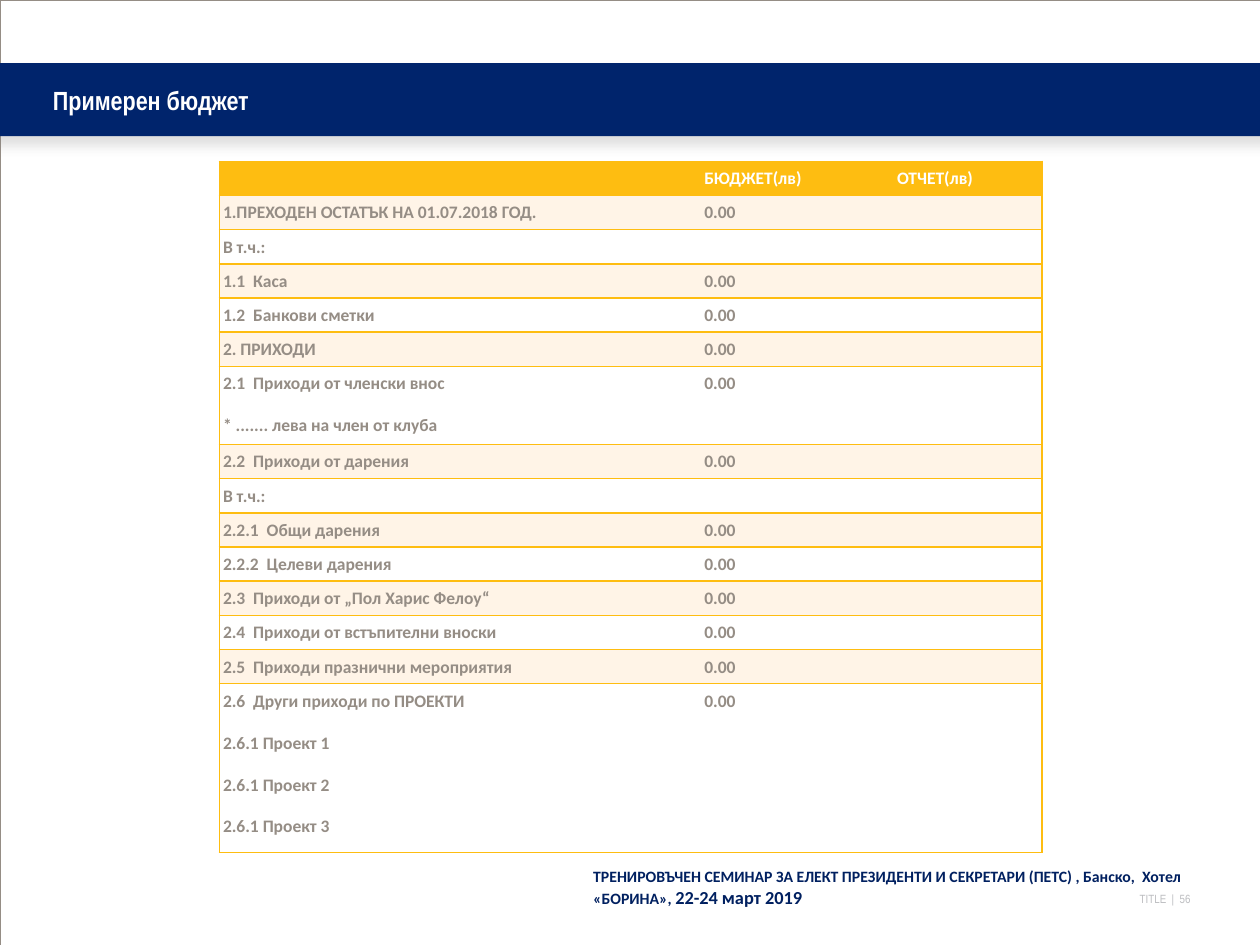
from dataclasses import dataclass
from typing import Optional

from lxml import etree
from pptx import Presentation, util as u
from pptx.dml.color import RGBColor
from pptx.enum import shapes, text
from pptx.oxml import ns, parse_xml

COLORS = {
    "navy": "00246C", "footer": "002060", "gold": "FEBD11", "cream": "FFF4E7",
    "white": "FFFFFF", "taupe": "958D85", "gray": "BCBDC0", "shadow": "808080",
}
COLUMNS, ROWS = 10, 7.5
UNIT = u.Inches(1)  # one grid column or row
CELL_MARGIN = 0.03
COLUMN_WIDTHS = (3.82, 1.53, 1.18)
TABLE_HEIGHT = 5.49
TALL_ROWS = {6: 0.62, 14: 1.34}
ZERO = "0.00"


@dataclass(frozen=True)
class Box:
    """A place on the slide, in grid columns and rows."""
    left: float
    top: float
    width: float
    height: float

    def lengths(self) -> tuple[int, ...]:
        return tuple(grid(n) for n in (self.left, self.top, self.width, self.height))


@dataclass(frozen=True)
class Style:
    size: float
    font: str
    color: str
    bold: bool = False


@dataclass(frozen=True)
class BudgetRow:
    label: str
    budget: str = ZERO
    report: str = ""


BUDGET = [
    BudgetRow("", "БЮДЖЕТ(лв)", "ОТЧЕТ(лв)"),
    BudgetRow("1.ПРЕХОДЕН ОСТАТЪК НА 01.07.2018 ГОД."),
    BudgetRow("В т.ч.:", ""),
    BudgetRow("1.1  Каса"),
    BudgetRow("1.2  Банкови сметки"),
    BudgetRow("2. ПРИХОДИ"),
    BudgetRow("2.1  Приходи от членски внос\n* ....... лева на член от клуба"),
    BudgetRow("2.2  Приходи от дарения"),
    BudgetRow("В т.ч.:", ""),
    BudgetRow("2.2.1  Общи дарения"),
    BudgetRow("2.2.2  Целеви дарения"),
    BudgetRow("2.3  Приходи от „Пол Харис Фелоу“"),
    BudgetRow("2.4  Приходи от встъпителни вноски"),
    BudgetRow("2.5  Приходи празнични мероприятия"),
    BudgetRow("2.6  Други приходи по ПРОЕКТИ\n2.6.1 Проект 1\n2.6.1 Проект 2\n2.6.1 Проект 3"),
]


def grid(count: float) -> int:
    return round(count * UNIT)


def rgb(name: str) -> RGBColor:
    return RGBColor.from_string(COLORS[name])


def format_run(run, style: Style) -> None:
    font = run.font
    font.size, font.name, font.bold = u.Pt(style.size), style.font, style.bold
    font.color.rgb = rgb(style.color)


def place(shape, box: Box) -> None:
    shape.left, shape.top, shape.width, shape.height = box.lengths()


def clear_margins(frame) -> None:
    frame.margin_left = frame.margin_right = frame.margin_top = frame.margin_bottom = 0


def add_rectangle(slide, box: Box, fill: Optional[str] = None, line: Optional[str] = None):
    shape = slide.shapes.add_shape(shapes.MSO_SHAPE.RECTANGLE, *box.lengths())
    shape.shadow.inherit = False
    if fill:
        shape.fill.solid()
        shape.fill.fore_color.rgb = rgb(fill)
    else:
        shape.fill.background()
    if line:
        shape.line.color.rgb = rgb(line)
        shape.line.width = u.Pt(0.13)
    else:
        shape.line.fill.background()
    return shape


def add_drop_shadow(shape) -> None:
    effects = shape.element.spPr.find(ns.qn("a:effectLst"))
    effects.append(parse_xml(
        f'<a:outerShdw {ns.nsdecls("a")} blurRad="{u.Pt(7)}" dist="{u.Pt(4.8)}" '
        f'dir="5400000" algn="t" rotWithShape="0"><a:srgbClr val="{COLORS["shadow"]}">'
        '<a:alpha val="25000"/></a:srgbClr></a:outerShdw>'))


def add_text(slide, box: Box, parts: list[tuple[str, Style]]):
    frame = slide.shapes.add_textbox(*box.lengths()).text_frame
    frame.word_wrap = True
    for words, style in parts:
        run = frame.paragraphs[0].add_run()
        run.text = words
        format_run(run, style)
    return frame


def add_title(slide, box: Box, words: str) -> None:
    title = slide.shapes.title
    slide.shapes.element.append(title.element)  # above the band
    place(title, box)
    frame = title.text_frame
    frame.text = words
    frame.vertical_anchor = text.MSO_ANCHOR.MIDDLE
    clear_margins(frame)
    frame.paragraphs[0].alignment = text.PP_ALIGN.LEFT
    format_run(frame.paragraphs[0].runs[0], Style(15, "Arial Narrow", "white", True))


def set_borders(cell, sides: str) -> None:
    """Draw gold borders on the given sides and clear the others."""
    properties = cell._tc.get_or_add_tcPr()
    for side in "LRTB":
        line = etree.SubElement(properties, ns.qn(f"a:ln{side}"), w=str(u.Pt(1)))
        if side in sides:
            fill = etree.SubElement(line, ns.qn("a:solidFill"))
            etree.SubElement(fill, ns.qn("a:srgbClr"), val=COLORS["gold"])
        else:
            etree.SubElement(line, ns.qn("a:noFill"))


def fill_cell(cell, words: str, fill: str, style: Style, sides: str) -> None:
    cell.margin_left = cell.margin_right = grid(CELL_MARGIN)
    cell.margin_top = cell.margin_bottom = grid(CELL_MARGIN)
    set_borders(cell, sides)
    cell.fill.solid()
    cell.fill.fore_color.rgb = rgb(fill)
    cell.text_frame.text = words
    for paragraph in cell.text_frame.paragraphs:
        paragraph.alignment = text.PP_ALIGN.JUSTIFY
        paragraph.line_spacing = 1.15
        paragraph.space_after = u.Pt(10)
        for run in paragraph.runs:
            format_run(run, style)
        if not paragraph.runs:  # keeps an empty row low
            etree.SubElement(paragraph._p, ns.qn("a:endParaRPr"), sz=str(style.size * 100))


def add_budget_table(slide) -> None:
    box = Box(1.74, 1.28, sum(COLUMN_WIDTHS), TABLE_HEIGHT)
    table = slide.shapes.add_table(len(BUDGET), len(COLUMN_WIDTHS), *box.lengths()).table
    table.horz_banding = False
    for column, width in zip(table.columns, COLUMN_WIDTHS):
        column.width = grid(width)
    plain_height = (TABLE_HEIGHT - sum(TALL_ROWS.values())) / (len(BUDGET) - len(TALL_ROWS))
    for index, entry in enumerate(BUDGET):
        table.rows[index].height = grid(TALL_ROWS.get(index, plain_height))
        fill = "gold" if index == 0 else "cream" if index % 2 else "white"
        style = Style(10, "Calibri", "taupe" if index else "white", True)
        cells = ((entry.label, "LTB"), (entry.budget, "TB"), (entry.report, "RTB"))
        for column, (words, sides) in enumerate(cells):
            fill_cell(table.cell(index, column), words, fill, style, sides)


def main() -> None:
    presentation = Presentation()
    presentation.slide_width, presentation.slide_height = grid(COLUMNS), grid(ROWS)
    slide = presentation.slides.add_slide(presentation.slide_layouts[5])

    number = add_text(slide, Box(7.7, 7.08, 1.75, 0.11),
                      [("TITLE  |  56", Style(6.8, "Arial Narrow", "gray"))])
    clear_margins(number)
    number.paragraphs[0].alignment = text.PP_ALIGN.RIGHT
    add_text(slide, Box(4.61, 6.83, 5.37, 0.43), [
        ("ТРЕНИРОВЪЧЕН СЕМИНАР ЗА ЕЛЕКТ ПРЕЗИДЕНТИ И СЕКРЕТАРИ (ПЕТС) , Банско,  Хотел «БОРИНА», ",
         Style(9, "Calibri", "footer", True)),
        ("22-24 март 2019", Style(10.5, "Calibri", "footer", True)),
    ])
    add_rectangle(slide, Box(0, 0, COLUMNS, ROWS), line="taupe")
    add_drop_shadow(add_rectangle(slide, Box(-0.08, 0.5, 10.17, 0.58), fill="navy"))
    add_title(slide, Box(0.42, 0.5, 9.58, 0.58), "Примерен бюджет")
    add_budget_table(slide)
    presentation.save("out.pptx")


if __name__ == "__main__":
    main()
